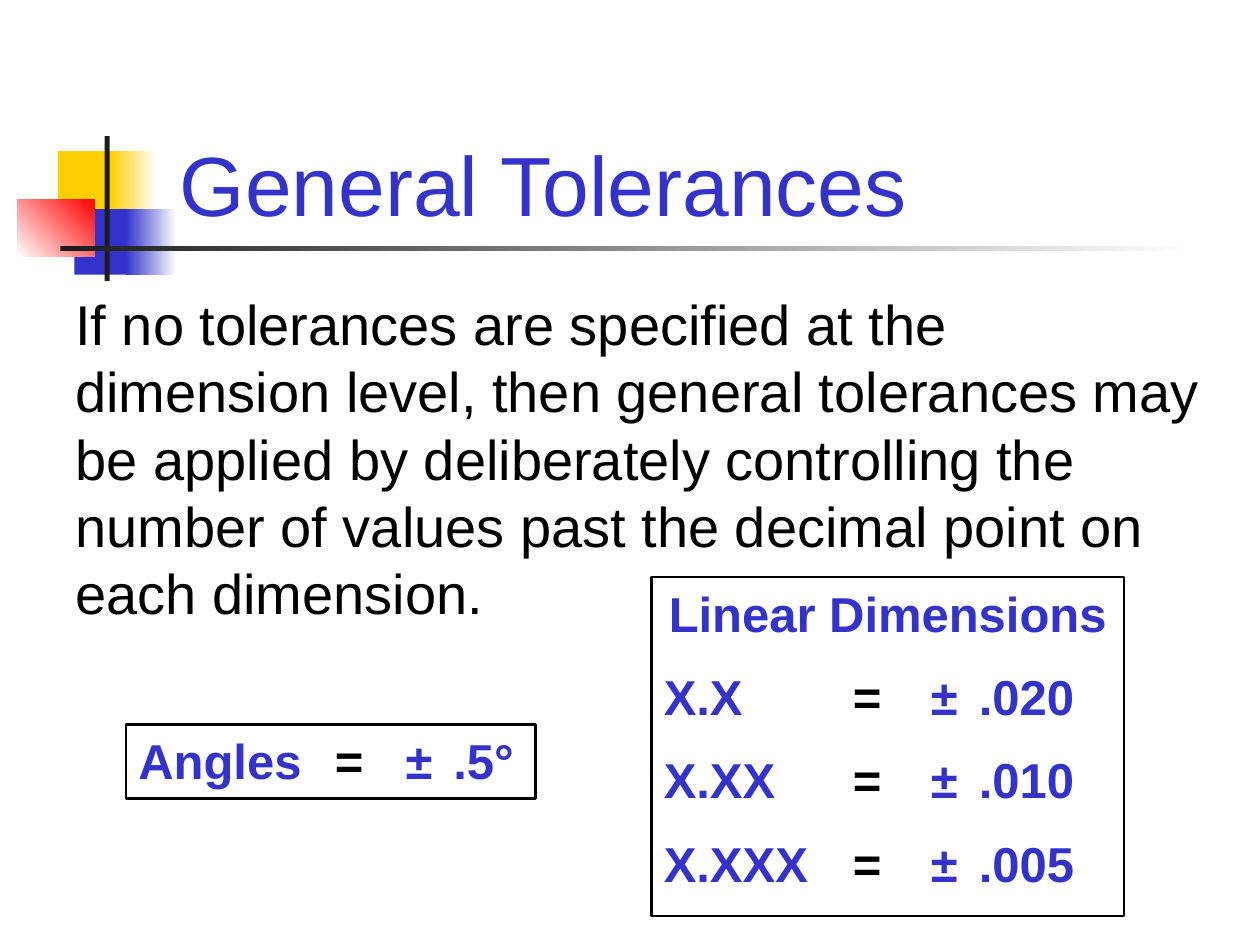
from lxml import etree
from pptx import Presentation
from pptx.dml.color import RGBColor
from pptx.enum.shapes import MSO_SHAPE
from pptx.enum.text import MSO_ANCHOR, PP_ALIGN
from pptx.oxml.ns import qn
from pptx.util import Inches, Pt

RECTANGLE = MSO_SHAPE.RECTANGLE
TOP = MSO_ANCHOR.TOP
LEFT, CENTER = PP_ALIGN.LEFT, PP_ALIGN.CENTER
BLUE, YELLOW, RED = "3333CC", "FFCF01", "FF0000"
BLACK, CHARCOAL, WHITE = "000000", "1C1C1C", "FFFFFF"


def rgb(value):
    """Return the colour for a hex string."""
    return RGBColor.from_string(value)


def add_rectangle(page, box, colors=(), angle=0, outline=None):
    """Add a rectangle with no fill, one colour or a two-colour gradient."""
    shape = page.shapes.add_shape(RECTANGLE, *[Inches(length) for length in box])
    shape.shadow.inherit = False
    if len(colors) == 2:
        shape.fill.gradient()
        shape.fill.gradient_angle = angle
        for stop, color in zip(shape.fill.gradient_stops, colors):
            stop.color.rgb = rgb(color)
    elif colors:
        shape.fill.solid()
        shape.fill.fore_color.rgb = rgb(colors[0])
    else:
        shape.fill.background()
    if outline:
        shape.line.color.rgb = rgb(outline)
        shape.line.width = Pt(1.5)
    else:
        shape.line.fill.background()
    return shape


def write_text(frame, lines, size, bold=False, first_align=LEFT, tabs=()):
    """Write lines, each a list of (text, colour) spans, into a text frame."""
    frame.word_wrap = True
    frame.vertical_anchor = TOP
    for index, spans in enumerate(lines):
        para = frame.paragraphs[0] if index == 0 else frame.add_paragraph()
        if tabs:
            tab_list = etree.SubElement(para._p.get_or_add_pPr(), qn("a:tabLst"))
            for position in tabs:
                etree.SubElement(tab_list, qn("a:tab"), pos=str(Inches(position)), algn="l")
        para.alignment = LEFT if index else first_align
        if index:
            para.space_before = Pt(size / 2)
        for text, color in spans:
            span = para.add_run()
            span.text = text
            span.font.name = "Arial"
            span.font.size = Pt(size)
            span.font.bold = bold
            span.font.color.rgb = rgb(color)


def add_label(page, box, text, size, color):
    """Add a borderless box with one paragraph."""
    label = page.shapes.add_textbox(*[Inches(length) for length in box])
    write_text(label.text_frame, [[(text, color)]], size)


def add_emblem(page, box):
    """Place the coloured squares and crossing rules of the title."""
    left, top, width, height = box
    parts = [
        (0.32, 0.12, 0.48, 0.52, [YELLOW], 0),
        (0.74, 0.12, 0.36, 0.52, [YELLOW, WHITE], 0),
        (0.45, 0.58, 0.46, 0.52, [BLUE], 0),
        (0.86, 0.58, 0.4, 0.52, [BLUE, WHITE], 0),
        (0, 0.5, 0.61, 0.46, [WHITE, RED], 45),
        (0.69, 0, 0.04, height, [CHARCOAL], 0),
        (0.34, 0.87, width - 0.34, 0.04, [CHARCOAL, WHITE], 0),
    ]
    for x, y, part_width, part_height, colors, angle in parts:
        add_rectangle(page, (left + x, top + y, part_width, part_height), colors, angle)


def add_linear_box(page, box):
    """Place the framed list of linear tolerances."""
    values = [("X.X", ".020"), ("X.XX", ".010"), ("X.XXX", ".005")]
    lines = [[("Linear Dimensions", BLUE)]]
    lines += [[(name, BLUE), ("\t=\t", BLACK), (f"±\t{value}", BLUE)] for name, value in values]
    frame = add_rectangle(page, box, outline=BLACK).text_frame
    write_text(frame, lines, 28, bold=True, first_align=CENTER, tabs=(1.5, 2.12, 2.5))


def add_angle_box(page, box):
    """Place the framed angle tolerance."""
    line = [("Angles\t", BLUE), ("=\t", BLACK), ("±\t.5°", BLUE)]
    frame = add_rectangle(page, box, outline=BLACK).text_frame
    write_text(frame, [line], 28, bold=True, tabs=(1.56, 2.12, 2.5))


def main():
    """Build the slide and save it."""
    deck = Presentation()
    deck.slide_width, deck.slide_height = Inches(10), Inches(7.5)
    page = deck.slides.add_slide(deck.slide_layouts[6])
    add_emblem(page, (0.14, 1.08, 9.34, 1.15))
    add_label(
        page,
        (0.5, 2.25, 9.17, 2.77),
        "If no tolerances are specified at the dimension level, then general "
        "tolerances may be applied by deliberately controlling the number of "
        "values past the decimal point on each dimension.",
        32,
        BLACK,
    )
    add_label(page, (1.33, 1, 6.25, 0.9), "General Tolerances", 48, BLUE)
    add_linear_box(page, (5.17, 4.58, 3.75, 2.69))
    add_angle_box(page, (1, 5.75, 3.25, 0.59))
    deck.save("out.pptx")


if __name__ == "__main__":
    main()
